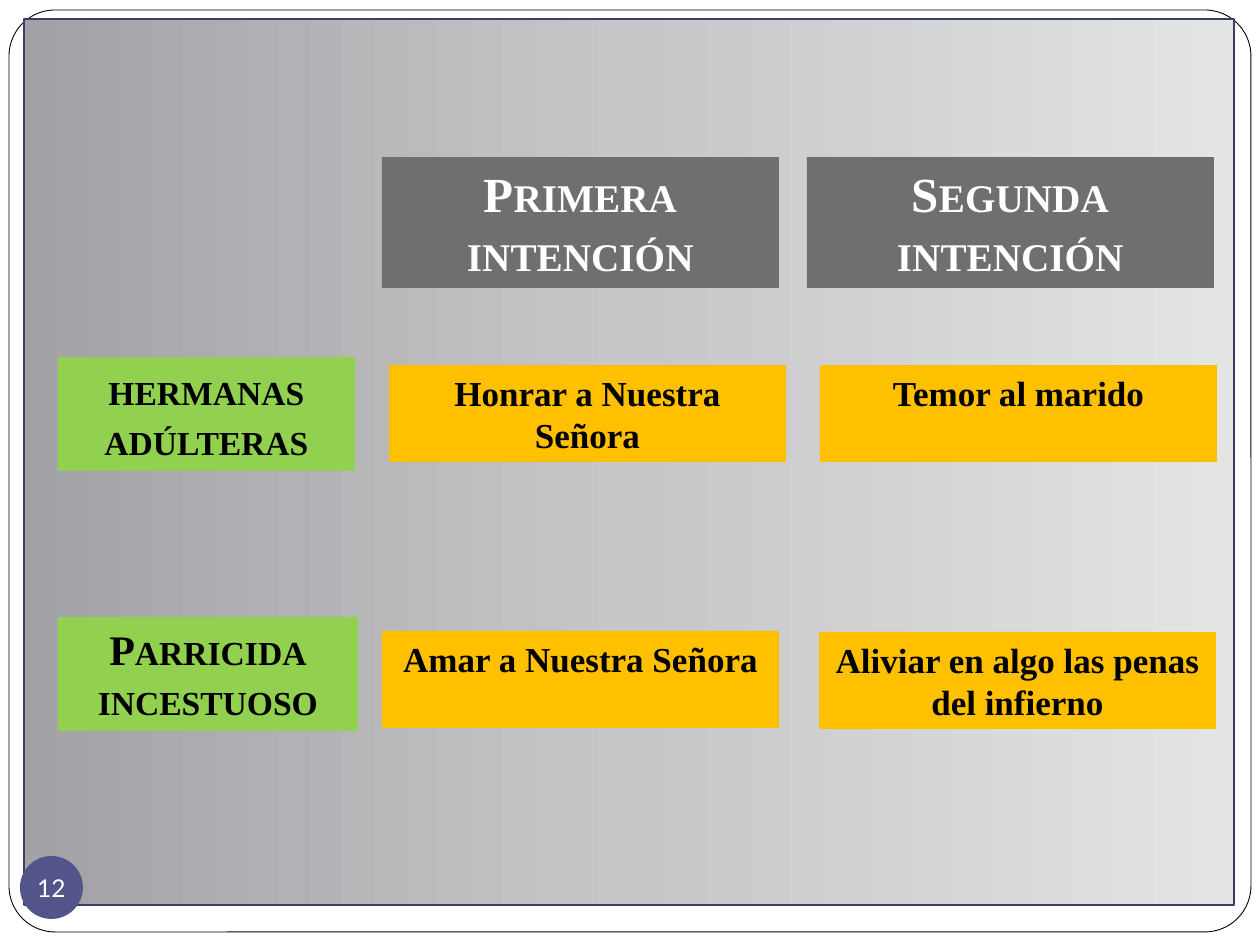
from copy import deepcopy

from pptx import Presentation
from pptx.dml.color import RGBColor
from pptx.enum.shapes import MSO_SHAPE
from pptx.enum.text import MSO_ANCHOR, PP_ALIGN
from pptx.util import Pt

PX = 914400 // 126
SERIF = "Times New Roman"
HEADER = dict(fill="6F6F6F", color="FFFFFF", size=28, small=True)
LABEL = dict(fill="92D050", color="000000", size=24, small=True)
ANSWER = dict(fill="FFC000", color="000000", size=20, small=False)
BOXES = [
    ("Primera intención", (382, 157, 397, 131), HEADER),
    ("Segunda intención", (807, 157, 407, 131), HEADER),
    ("hermanas adúlteras", (58, 357, 297, 114), LABEL),
    ("Parricida incestuoso", (58, 617, 300, 114), LABEL),
    ("Honrar a Nuestra Señora", (389, 365, 397, 97), ANSWER),
    ("Temor al marido", (820, 365, 397, 97), ANSWER),
    ("Amar a Nuestra Señora", (382, 631, 397, 97), ANSWER),
    ("Aliviar en algo las penas del infierno", (819, 632, 397, 97), ANSWER),
]
GRADIENT = [(0, "A2A2A6"), (0.5, "C7C7C9"), (1, "E3E4E4")]


def rgb(code):
    return RGBColor.from_string(code)


def add_box(kind, place, fill=None, line=None, width=1):
    shape = slide.shapes.add_shape(kind, *(n * PX for n in place))
    shape.shadow.inherit = False
    if fill:
        shape.fill.solid()
        shape.fill.fore_color.rgb = rgb(fill)
    if line:
        shape.line.color.rgb = rgb(line)
        shape.line.width = Pt(width)
    else:
        shape.line.fill.background()
    return shape


def add_text(shape, text, font, size, color, anchor=MSO_ANCHOR.TOP):
    frame = shape.text_frame
    frame.word_wrap = True
    frame.vertical_anchor = anchor
    para = frame.paragraphs[0]
    para.alignment = PP_ALIGN.CENTER
    run = para.add_run()
    run.text = text
    run.font.name = font
    run.font.size = Pt(size)
    run.font.color.rgb = rgb(color)
    return run


def set_gradient(shape, stops):
    """Fill from left to right, with any number of stops."""
    fill = shape.fill
    fill.gradient()
    fill.gradient_angle = 0
    items = fill.gradient_stops
    nodes = shape._element.spPr.gradFill.gsLst
    for _ in range(len(stops) - len(items)):
        nodes.append(deepcopy(nodes[-1]))
    for item, (pos, code) in zip(fill.gradient_stops, stops):
        item.position = pos
        item.color.rgb = rgb(code)


deck = Presentation()
deck.slide_width, deck.slide_height = 1260 * PX, 945 * PX
slide = deck.slides.add_slide(deck.slide_layouts[6])

frame = add_box(MSO_SHAPE.ROUNDED_RECTANGLE, (9, 10, 1242, 922), "FFFFFF", "000000", 0.5)
frame.adjustments[0] = 0.05
panel = add_box(MSO_SHAPE.RECTANGLE, (24, 19, 1210, 886), line="3D3E66", width=1.5)
set_gradient(panel, GRADIENT)

badge = add_box(MSO_SHAPE.OVAL, (20, 856, 63, 63), "53548A")
add_text(badge, "12", "Lato", 14, "FFFFFF", MSO_ANCHOR.MIDDLE)
inner = badge.text_frame
inner.word_wrap = False
inner.margin_left = inner.margin_right = inner.margin_top = inner.margin_bottom = 0

for text, place, style in BOXES:
    box = add_box(MSO_SHAPE.RECTANGLE, place, style["fill"])
    run = add_text(box, text, SERIF, style["size"], style["color"])
    run.font.bold = True
    if style["small"]:
        run.font._element.set("cap", "small")

deck.save("out.pptx")
